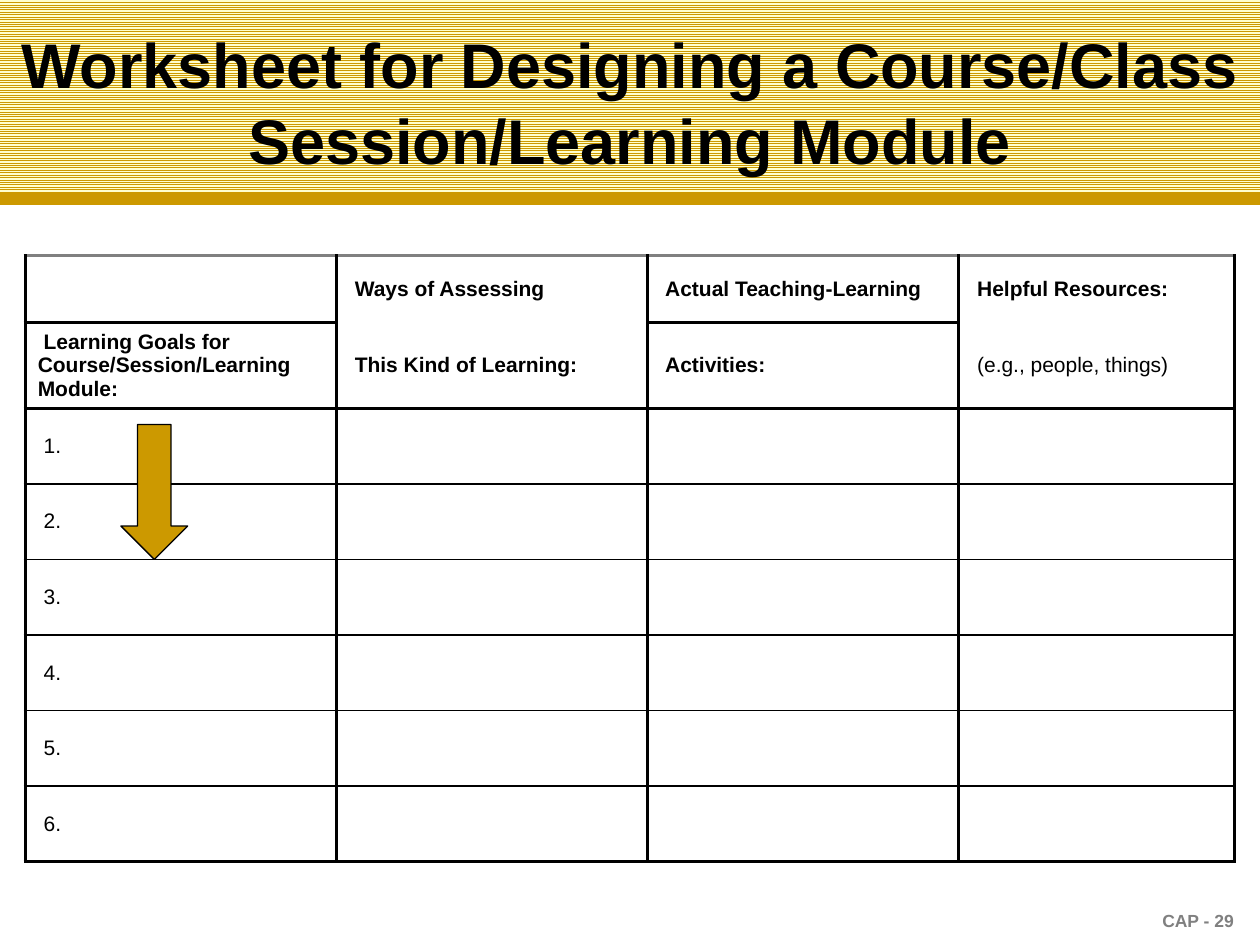
"""Build the course design worksheet slide."""
from lxml import etree
from pptx import Presentation, util as u
from pptx.dml.color import RGBColor
from pptx.enum import dml, shapes, text
from pptx.oxml.ns import qn

COLORS = {"gold": "CC9900", "cream": "FFFFCC", "black": "000000", "gray": "808080"}
HEADINGS = [
    ["", " Ways of Assessing", " Actual Teaching-Learning", " Helpful Resources:"],
    [" Learning Goals for Course/Session/Learning Module:", " This Kind of Learning:",
     " Activities:", " (e.g., people, things)"],
]
GOALS = 6
COLUMNS = [2.47, 2.47, 2.47, 2.19]
ROWS = [0.53, 0.66] + [0.6] * GOALS


def format_text(paragraph, size, color="black", bold=True):
    for run in paragraph.runs:
        run.font.name = "Arial"
        run.font.size = u.Pt(size)
        run.font.bold = bold
        run.font.color.rgb = RGBColor.from_string(COLORS[color])


def set_border(cell, side, points, color="black"):
    line = etree.Element(qn(f"a:ln{side}"), w=str(u.Pt(points)))
    if points:
        fill = etree.SubElement(line, qn("a:solidFill"))
        etree.SubElement(fill, qn("a:srgbClr"), val=COLORS[color])
    else:
        etree.SubElement(line, qn("a:noFill"))
    properties = cell._tc.get_or_add_tcPr()
    properties.insert(len(properties.findall("*")) - 1, line)


presentation = Presentation()
presentation.slide_width, presentation.slide_height = u.Inches(10), u.Inches(7.5)
width = presentation.slide_width
slide = presentation.slides.add_slide(presentation.slide_layouts[5])
title = slide.shapes.title

band_height = u.Inches(1.58)
band = slide.shapes.add_shape(shapes.MSO_SHAPE.RECTANGLE, 0, 0, width, band_height)
band.shadow.inherit = False
band.fill.patterned()
band.fill.pattern = dml.MSO_PATTERN.NARROW_HORIZONTAL
band.fill.fore_color.rgb = RGBColor.from_string(COLORS["gold"])
band.fill.back_color.rgb = RGBColor.from_string(COLORS["cream"])
band.line.fill.background()

rule = slide.shapes.add_connector(shapes.MSO_CONNECTOR.STRAIGHT, 0, band_height, width, band_height)
rule.line.color.rgb = RGBColor.from_string(COLORS["gold"])
rule.line.width = u.Pt(6.5)
etree.SubElement(rule._element.spPr, qn("a:effectLst"))

page_label = slide.shapes.add_textbox(u.Inches(7.56), u.Inches(7.17), u.Inches(2.33), u.Inches(0.18))
page_label.text_frame.word_wrap = True
page_label.text_frame.text = "CAP - 29"
paragraph = page_label.text_frame.paragraphs[0]
paragraph.alignment = text.PP_ALIGN.RIGHT
format_text(paragraph, 10, "gray")

worksheet = slide.shapes.add_table(
    len(ROWS), len(COLUMNS), u.Inches(0.2), u.Inches(2.03),
    u.Inches(sum(COLUMNS)), u.Inches(sum(ROWS))).table
worksheet.first_row = worksheet.horz_banding = False
for column, column_width in zip(worksheet.columns, COLUMNS):
    column.width = u.Inches(column_width)
for row, row_height in zip(worksheet.rows, ROWS):
    row.height = u.Inches(row_height)

contents = HEADINGS + [[f" {number}.", "", "", ""] for number in range(1, GOALS + 1)]
rules = [2.25, 2, 2] + [1] * (GOALS - 1) + [2]
for r, labels in enumerate(contents):
    for c, label in enumerate(labels):
        cell = worksheet.cell(r, c)
        cell.fill.background()
        cell.vertical_anchor = text.MSO_ANCHOR.MIDDLE
        cell.margin_top = cell.margin_bottom = u.Inches(0.04)
        cell.text_frame.text = label
        format_text(cell.text_frame.paragraphs[0], 12, bold=r < 2 and (r, c) != (1, 3))
        joined = c in (1, 3)
        set_border(cell, "L", 2)
        set_border(cell, "R", 2)
        set_border(cell, "T", 0 if r == 1 and joined else rules[r], "black" if r else "gray")
        set_border(cell, "B", 0 if r == 0 and joined else rules[r + 1])

arrow = slide.shapes.add_shape(
    shapes.MSO_SHAPE.DOWN_ARROW, u.Inches(0.96), u.Inches(3.37), u.Inches(0.53), u.Inches(1.07))
arrow.shadow.inherit = False
arrow.fill.solid()
arrow.fill.fore_color.rgb = RGBColor.from_string(COLORS["gold"])
arrow.line.color.rgb = RGBColor.from_string(COLORS["black"])
arrow.line.width = u.Pt(0.75)

title.left, title.top, title.width, title.height = 0, u.Inches(0.18), width, u.Inches(1.25)
title.text_frame.text = "Worksheet for Designing a Course/Class Session/Learning Module"
title.text_frame.auto_size = text.MSO_AUTO_SIZE.NONE
title.text_frame.vertical_anchor = text.MSO_ANCHOR.MIDDLE
paragraph = title.text_frame.paragraphs[0]
paragraph.alignment = text.PP_ALIGN.CENTER
format_text(paragraph, 36)
slide.shapes._spTree.append(title._element)

presentation.save("out.pptx")
